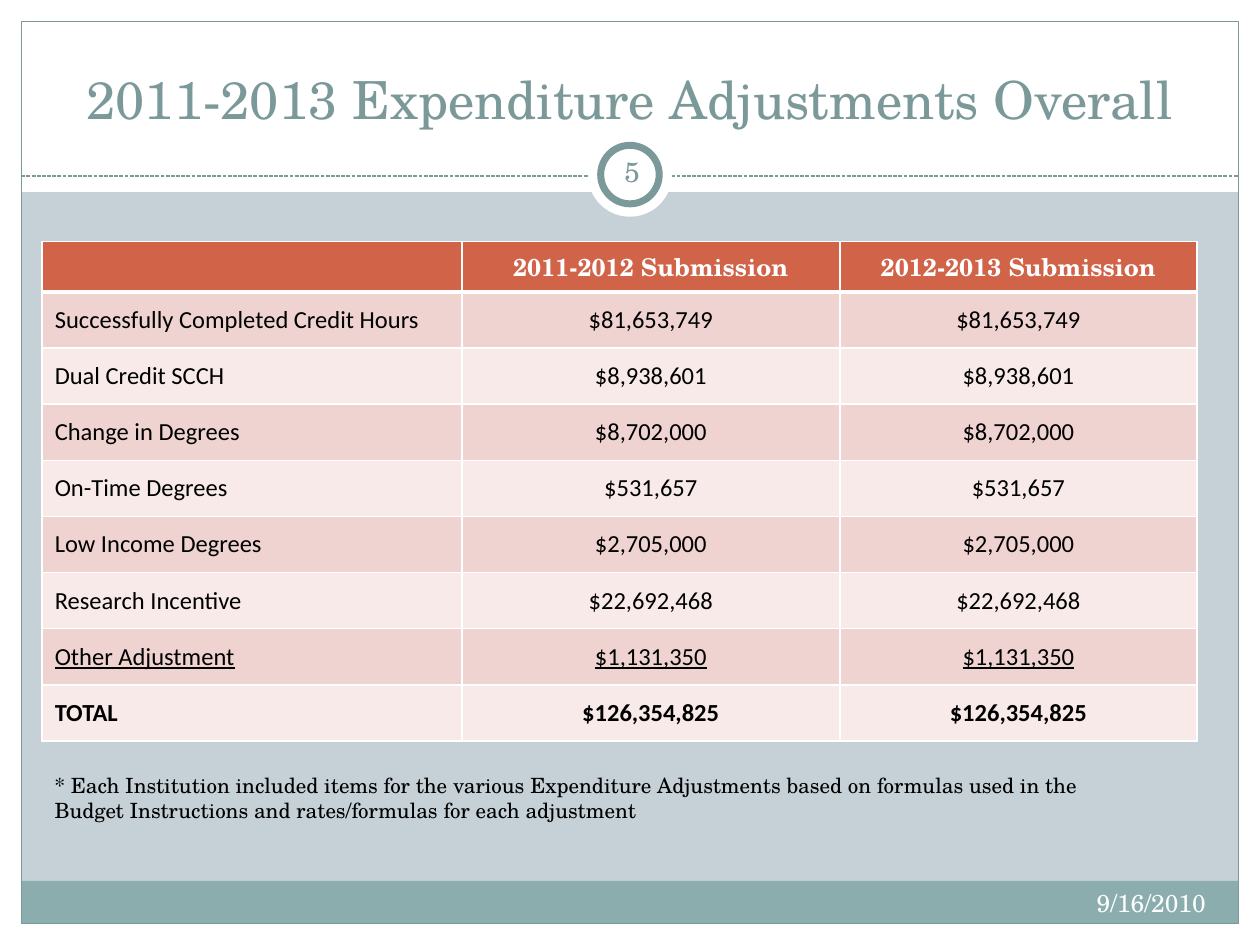
from pptx import Presentation
from pptx import util as u
from pptx.dml.color import RGBColor
from pptx.enum import dml, shapes, text
from pptx.oxml.ns import qn
from lxml import etree

SERIF = "TeX Gyre Schola"
SANS = "Calibri"
WHITE, SLATE, TEAL, RUST, BLACK = "FFFFFF", "7C999A", "8CADAE", "D16349", "000000"
BANDS = "EED3D0", "F7EAE9"
LEFT, MID, RIGHT = text.PP_ALIGN.LEFT, text.PP_ALIGN.CENTER, text.PP_ALIGN.RIGHT
TOP, CORE, BASE = text.MSO_ANCHOR.TOP, text.MSO_ANCHOR.MIDDLE, text.MSO_ANCHOR.BOTTOM
RECT, OVAL = shapes.MSO_SHAPE.RECTANGLE, shapes.MSO_SHAPE.OVAL

ROWS = [
    ("Successfully Completed Credit Hours", "$81,653,749"),
    ("Dual Credit SCCH", "$8,938,601"),
    ("Change in Degrees", "$8,702,000"),
    ("On-Time Degrees", "$531,657"),
    ("Low Income Degrees", "$2,705,000"),
    ("Research Incentive", "$22,692,468"),
    ("Other Adjustment", "$1,131,350"),
    ("TOTAL", "$126,354,825"),
]


def color(code):
    return RGBColor.from_string(code)


def place(box):
    return [u.Cm(n) for n in box]


def paint(item, code):
    item.fill.solid()
    item.fill.fore_color.rgb = color(code)


def form(slide, kind, box, fill=None, line=None, width=0.75):
    item = slide.shapes.add_shape(kind, *place(box))
    item.shadow.inherit = False
    if fill:
        paint(item, fill)
    else:
        item.fill.background()
    if line:
        item.line.color.rgb = color(line)
        item.line.width = u.Pt(width)
    else:
        item.line.fill.background()


def write(frame, words, size, code, font=SERIF, align=LEFT, bold=False, under=False):
    para = frame.paragraphs[0]
    para.alignment = align
    run = para.add_run()
    run.text = words
    run.font.size = u.Pt(size)
    run.font.name = font
    run.font.color.rgb = color(code)
    run.font.bold = bold
    run.font.underline = under


def label(slide, box, words, size, code, align=LEFT, anchor=TOP, inset=None):
    frame = slide.shapes.add_textbox(*place(box)).text_frame
    frame.word_wrap = True
    frame.vertical_anchor = anchor
    if inset is not None:
        frame.margin_left = frame.margin_right = u.Cm(inset)
        frame.margin_top = frame.margin_bottom = u.Cm(inset)
    write(frame, words, size, code, align=align)


def border(cell, **widths):
    props = cell._tc.get_or_add_tcPr()
    for spot, side in enumerate(("L", "R", "T", "B")):
        line = etree.Element(qn(f"a:ln{side}"), w=str(u.Pt(widths.get(side, 1))))
        fill = etree.SubElement(line, qn("a:solidFill"))
        etree.SubElement(fill, qn("a:srgbClr"), val=WHITE)
        props.insert(spot, line)


def frame(slide, box):
    x, y, w, h = box
    edge = 0.43
    form(slide, RECT, (x, y + h - edge, w, edge), WHITE)
    form(slide, RECT, (x, y, w, 3.87), WHITE)
    for left in (x, x + w - edge):
        form(slide, RECT, (left, y, edge, h), WHITE)
    form(slide, RECT, (x + edge, y + h - 1.29, w - 2 * edge, 0.86), TEAL)
    form(slide, RECT, (x + edge, y + edge, w - 2 * edge, h - 2 * edge), line=SLATE)
    level = u.Cm(y + 3.55)
    rule = slide.shapes.add_connector(
        shapes.MSO_CONNECTOR.STRAIGHT, u.Cm(x + edge), level, u.Cm(x + w - edge), level)
    rule.line.color.rgb = color(SLATE)
    rule.line.width = u.Pt(0.75)
    rule.line.dash_style = dml.MSO_LINE.SQUARE_DOT
    etree.SubElement(rule._element.spPr, qn("a:effectLst"))


def badge(slide, box):
    x, y, w, h = box
    gap = 0.26
    form(slide, OVAL, box, WHITE)
    form(slide, OVAL, (x + gap, y + gap, w - 2 * gap, h - 2 * gap), WHITE, SLATE, 4)
    label(slide, (x + gap, y + 0.18, 1.27, 1.22), "5", 16, SLATE, MID, CORE, 0.13)


def grid(slide, box):
    x, y, w, h = box
    head = 1.01
    table = slide.shapes.add_table(len(ROWS) + 1, 3, *place(box)).table
    for col, size in zip(table.columns, (8.46, 7.62, w - 16.08)):
        col.width = u.Cm(size)
    for row in table.rows:
        row.height = u.Cm((h - head) / len(ROWS))
    table.rows[0].height = u.Cm(head)

    for col, words in enumerate(("", "2011-2012 Submission", "2012-2013 Submission")):
        cell = table.cell(0, col)
        paint(cell, RUST)
        border(cell, B=3)
        if words:
            write(cell.text_frame, words, 14, WHITE, align=MID, bold=True)

    for num, (name, sum_) in enumerate(ROWS, 1):
        for col, words in enumerate((name, sum_, sum_)):
            cell = table.cell(num, col)
            cell.vertical_anchor = CORE
            paint(cell, BANDS[(num - 1) % 2])
            border(cell, T=3 if num == 1 else 1)
            write(cell.text_frame, words, 14, BLACK, SANS, MID if col else LEFT,
                  bold=name == "TOTAL", under=name == "Other Adjustment")


def main():
    deck = Presentation()
    deck.slide_width, deck.slide_height = u.Cm(25.4), u.Cm(19.05)
    slide = deck.slides.add_slide(deck.slide_layouts[6])
    paint(slide.background, "C5D1D7")
    frame(slide, (0, 0, 25.4, 19.05))
    badge(slide, (11.85, 2.67, 1.7, 1.7))
    label(slide, (0.85, 0.64, 23.7, 2.11), "2011-2013 Expenditure Adjustments Overall",
          30, SLATE, MID, BASE)
    grid(slide, (0.85, 4.87, 23.28, 10.06))
    label(slide, (0.85, 15.45, 21.8, 2.31),
          "* Each Institution included items for the various Expenditure Adjustments based on "
          "formulas used in the Budget Instructions and rates/formulas for each adjustment",
          12, BLACK)
    label(slide, (16.09, 17.78, 8.47, 1.02), "9/16/2010", 14, WHITE, RIGHT)
    deck.save("out.pptx")


if __name__ == "__main__":
    main()
